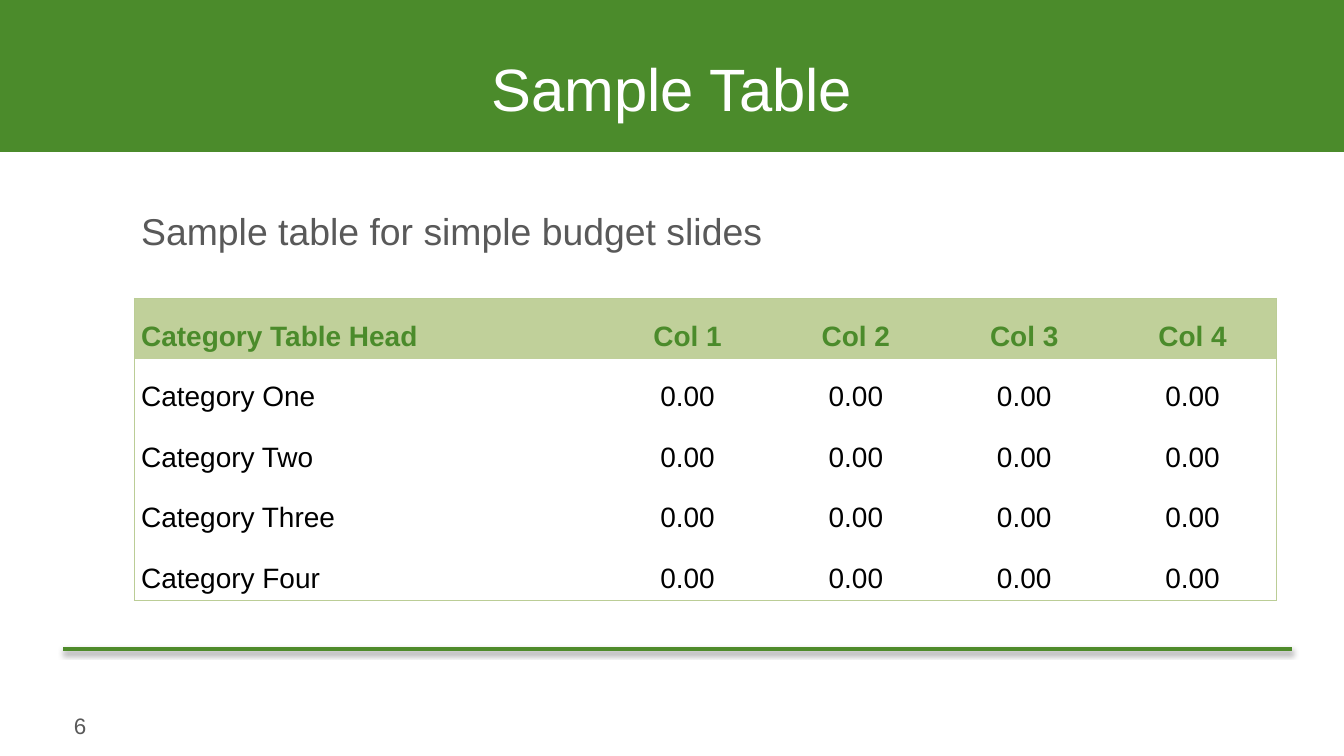
from lxml import etree
from pptx import Presentation
from pptx.dml.color import RGBColor
from pptx.enum.shapes import MSO_CONNECTOR, MSO_SHAPE
from pptx.enum.text import MSO_ANCHOR, MSO_AUTO_SIZE, PP_ALIGN
from pptx.oxml import parse_xml
from pptx.oxml.ns import nsdecls, qn
from pptx.util import Inches, Pt

RECT = MSO_SHAPE.RECTANGLE
LINE = MSO_CONNECTOR.STRAIGHT
MID, TOP = MSO_ANCHOR.MIDDLE, MSO_ANCHOR.TOP
LEFT, CENTER = PP_ALIGN.LEFT, PP_ALIGN.CENTER
FIXED = MSO_AUTO_SIZE.NONE

GREEN = RGBColor(0x4B, 0x8B, 0x2B)
RULE = RGBColor(0x4F, 0x8B, 0x2B)
PALE = RGBColor(0xC0, 0xD0, 0x9A)
EDGE = RGBColor(0xBB, 0xCD, 0x96)
GRAY = RGBColor(0x59, 0x59, 0x59)
WHITE = RGBColor(0xFF, 0xFF, 0xFF)
BLACK = RGBColor(0, 0, 0)

PAD = Inches(0.05)
HEADS = ["Category Table Head"] + [f"Col {n}" for n in range(1, 5)]
ROWS = [HEADS] + [
    [f"Category {name}"] + ["0.00"] * 4 for name in ("One", "Two", "Three", "Four")
]


def style(para, size, color, align=LEFT, bold=False):
    """Format a paragraph and its runs."""
    para.alignment = align
    for run in para.runs:
        font = run.font
        font.name, font.size, font.bold = "Arial", Pt(size), bold
        font.color.rgb = color


def write(frame, text, size, color, align=LEFT, anchor=TOP, wrap=True):
    """Fill a text frame with one paragraph."""
    frame.text = text
    frame.auto_size = FIXED
    frame.word_wrap = wrap
    frame.vertical_anchor = anchor
    frame.margin_left = frame.margin_right = PAD
    frame.margin_top = frame.margin_bottom = PAD
    style(frame.paragraphs[0], size, color, align)


def add_head(slide, x, y, w, h):
    """Place the green band and the title on it."""
    title = slide.shapes.title
    band = slide.shapes.add_shape(RECT, Inches(x), Inches(y), Inches(w), Inches(h))
    band.shadow.inherit = False
    band.fill.solid()
    band.fill.fore_color.rgb = GREEN
    band.line.fill.background()
    title.element.addprevious(band.element)
    title.left, title.top = Inches(x + 0.5), Inches(y + 0.23)
    title.width, title.height = Inches(w - 1), Inches(0.84)
    title.fill.solid()
    title.fill.fore_color.rgb = GREEN
    title.line.color.rgb = GREEN
    title.line.width = Pt(0.25)
    write(title.text_frame, "Sample Table", 32, WHITE, CENTER, MID)


def add_text(slide, text, size, x, y, w, h, wrap=True):
    """Place a gray text box."""
    box = slide.shapes.add_textbox(Inches(x), Inches(y), Inches(w), Inches(h))
    write(box.text_frame, text, size, GRAY, wrap=wrap)


def add_edges(cell, sides):
    """Draw the named sides of a cell and clear the others."""
    props = cell._tc.get_or_add_tcPr()
    for side in "LRTB":
        line = etree.SubElement(props, qn(f"a:ln{side}"), w=str(Pt(0.75)))
        if side in sides:
            fill = etree.SubElement(line, qn("a:solidFill"))
            etree.SubElement(fill, qn("a:srgbClr"), val=str(EDGE))
        else:
            etree.SubElement(line, qn("a:noFill"))


def add_grid(slide, x, y, w, h):
    """Place the budget table with an outer border."""
    rows, cols = len(ROWS), len(HEADS)
    table = slide.shapes.add_table(
        rows, cols, Inches(x), Inches(y), Inches(w), Inches(h)
    ).table
    first = 3.49
    width = (w - first) / (cols - 1)
    for c, col in enumerate(table.columns):
        col.width = Inches(width if c else first)
    for r, row in enumerate(ROWS):
        table.rows[r].height = Inches(h / rows)
        for c, text in enumerate(row):
            cell = table.cell(r, c)
            ends = {"L": c == 0, "R": c == cols - 1, "T": r == 0, "B": r == rows - 1}
            add_edges(cell, [side for side, end in ends.items() if end])
            if r == 0:
                cell.fill.solid()
                cell.fill.fore_color.rgb = PALE
            else:
                cell.fill.background()
            cell.vertical_anchor = MID
            cell.margin_left = cell.margin_right = PAD
            cell.margin_top = cell.margin_bottom = Inches(0.04)
            cell.text_frame.text = text
            para = cell.text_frame.paragraphs[0]
            para.line_spacing = 1.5
            style(para, 15, BLACK if r else GREEN, CENTER if c else LEFT, r == 0)


def add_foot(slide, x, y, w):
    """Place the shadowed rule and the page number below it."""
    rule = slide.shapes.add_connector(
        LINE, Inches(x), Inches(y), Inches(x + w), Inches(y)
    )
    rule.line.color.rgb = RULE
    rule.line.width = Pt(2)
    rule.element.spPr.append(parse_xml(
        f'<a:effectLst {nsdecls("a")}>'
        f'<a:outerShdw blurRad="{Pt(3)}" dist="{Pt(1.6)}" dir="5400000" rotWithShape="0">'
        '<a:srgbClr val="000000"><a:alpha val="38000"/></a:srgbClr>'
        '</a:outerShdw></a:effectLst>'
    ))
    add_text(slide, "6", 12, x + 0.03, y + 0.42, 0.19, 0.3, wrap=False)


def main():
    """Build and save the slide."""
    deck = Presentation()
    deck.slide_width = Inches(10)
    deck.slide_height = deck.slide_width * 9 // 16
    slide = deck.slides.add_slide(deck.slide_layouts[5])
    add_head(slide, 0, 0, 10, 1.13)
    add_foot(slide, 0.47, 4.83, 9.14)
    add_text(slide, "Sample table for simple budget slides", 20, 1, 1.5, 7.98, 2.84)
    add_grid(slide, 1, 2.22, 8.5, 2.25)
    deck.save("out.pptx")


if __name__ == "__main__":
    main()
